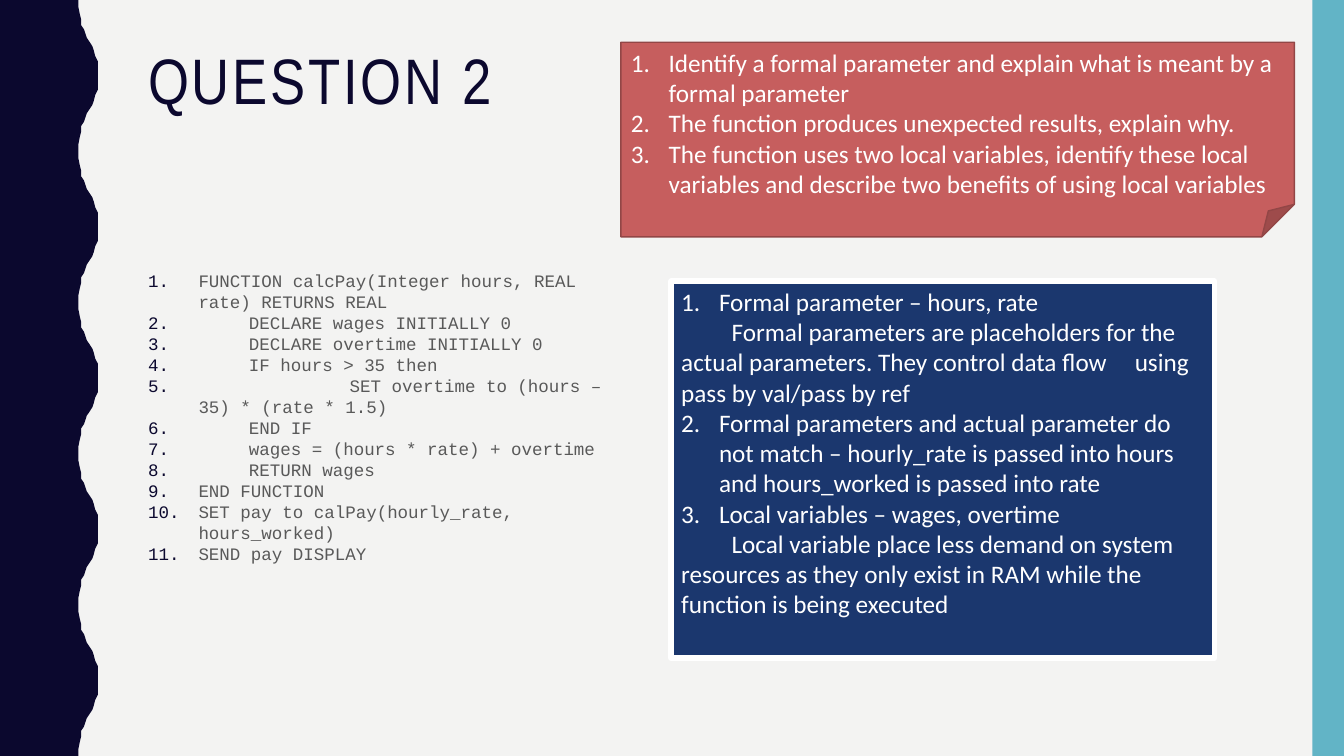
from lxml.etree import SubElement
from pptx import Presentation
from pptx.dml.color import RGBColor
from pptx.enum.shapes import MSO_SHAPE
from pptx.enum.text import MSO_ANCHOR, MSO_AUTO_SIZE, PP_ALIGN
from pptx.oxml.ns import qn
from pptx.util import Pt

NAVY, WHITE = "0B082E", "FFFFFF"
CODE = [
    "FUNCTION calcPay(Integer hours, REAL rate) RETURNS REAL",
    "\tDECLARE wages INITIALLY 0",
    "\tDECLARE overtime INITIALLY 0",
    "\tIF hours > 35 then",
    "\t\tSET overtime to (hours – 35) * (rate * 1.5)",
    "\tEND IF",
    "\twages = (hours * rate) + overtime",
    "\tRETURN wages",
    "END FUNCTION",
    "SET pay to calPay(hourly_rate, hours_worked)",
    "SEND pay DISPLAY",
]
TASKS = [
    "Identify a formal parameter and explain what is meant by a formal parameter",
    "The function produces unexpected results, explain why.",
    "The function uses two local variables, identify these local variables "
    "and describe two benefits of using local variables",
]
ANSWERS = [
    ("Formal parameter – hours, rate", 1),
    ("\tFormal parameters are placeholders for the \tactual parameters. "
     "They control data flow \tusing pass by val/pass by ref", None),
    ("Formal parameters and actual parameter do not match – hourly_rate is "
     "passed into hours and hours_worked is passed into rate", 2),
    ("Local variables – wages, overtime", 2),
    ("\tLocal variable place less demand on system resources as they only "
     "exist in RAM while the function is being executed", None),
]
HALF_X = [56, 56.5, 57, 57.5, 58.5, 59.5, 61, 62.5,
          64, 65.5, 67, 68.5, 69.5, 70, 70]
HALF_Y = [0, 5, 10, 14, 18, 21, 24, 27, 30, 33, 36, 40, 44, 49, 54]


def color(text):
    """Turn a hex string into a colour."""
    return RGBColor.from_string(text)


def apply(target, values):
    """Set each attribute named in a dict of format values."""
    for name, value in values.items():
        setattr(target, name, value)


def place(shape, box):
    """Move and size a shape, in points."""
    apply(shape, dict(zip(("left", "top", "width", "height"), map(Pt, box))))


def paint(shape, fill, line=None, width=0):
    """Give a shape a flat fill and an optional outline."""
    shape.shadow.inherit = False
    shape.fill.solid()
    shape.fill.fore_color.rgb = color(fill)
    if line:
        shape.line.color.rgb = color(line)
        shape.line.width = Pt(width)
    else:
        shape.line.fill.background()


def number(para, start, indent, hue):
    """Number a paragraph with a hanging indent."""
    props = para._p.get_or_add_pPr()
    props.set("marL", str(Pt(indent)))
    props.set("indent", str(-Pt(indent)))
    tone = SubElement(SubElement(props, qn("a:buClr")), qn("a:srgbClr"))
    tone.set("val", hue)
    mark = SubElement(props, qn("a:buAutoNum"))
    mark.set("type", "arabicPeriod")
    if start > 1:
        mark.set("startAt", str(start))


def write(shape, items, font, hue, layout, indent=27, mark=WHITE, tab=36):
    """Fill a shape with text and numbered lines."""
    frame = shape.text_frame
    apply(frame, {"word_wrap": True, "auto_size": MSO_AUTO_SIZE.NONE,
                  "vertical_anchor": MSO_ANCHOR.TOP})
    for index, (text, start) in enumerate(items):
        para = frame.add_paragraph() if index else frame.paragraphs[0]
        apply(para, {"alignment": PP_ALIGN.LEFT, "space_before": Pt(0),
                     "space_after": Pt(0), **layout})
        para._p.get_or_add_pPr().set("defTabSz", str(Pt(tab)))
        if start:
            number(para, start, indent, mark)
        run = para.add_run()
        run.text = text
        apply(run.font, font)
        run.font.color.rgb = color(hue)


def wave(slide):
    """Draw the wavy band down the left edge."""
    half = list(zip(HALF_X, HALF_Y))
    cycle = half + [(x, 108 - y) for x, y in half[-2::-1]]
    edge = [(x, y + 108 * turn) for turn in range(5) for x, y in cycle]
    pen = slide.shapes.build_freeform(0, 0, scale=Pt(1))
    pen.add_line_segments(edge + [(0, 540)], close=True)
    paint(pen.convert_to_shape(), NAVY)


def block(slide, kind, box, *style):
    """Add a painted preset shape."""
    shape = slide.shapes.add_shape(kind, *map(Pt, box))
    paint(shape, *style)
    return shape


def main():
    """Build the question slide."""
    deck = Presentation()
    apply(deck, {"slide_width": Pt(960), "slide_height": Pt(540)})
    slide = deck.slides.add_slide(deck.slide_layouts[1])
    slide.background.fill.solid()
    slide.background.fill.fore_color.rgb = color("F3F3F2")
    wave(slide)
    block(slide, MSO_SHAPE.RECTANGLE, (937.4, 0, 22.6, 540), "62B4C6")

    title, body = slide.placeholders
    place(title, (98.6, 30.2, 801.4, 59))
    write(title, [("QUESTION 2", None)],
          {"name": "Arial Narrow", "size": Pt(45.9)}, NAVY,
          {"line_spacing": 0.9})
    title.text_frame.vertical_anchor = MSO_ANCHOR.MIDDLE
    title.text_frame.paragraphs[0].runs[0].font._element.set("spc", "200")

    place(body, (98.6, 189.4, 344.9, 237.6))
    write(body, [(line, 1) for line in CODE],
          {"name": "Courier New", "size": Pt(12.5)}, "595959",
          {"line_spacing": Pt(15)}, 36, NAVY, 72)

    plain = {"name": "Calibri", "size": Pt(18)}
    note = block(slide, MSO_SHAPE.FOLDED_CORNER, (443.5, 30.2, 481, 139),
                 "C65E5E", "924646", 1)
    write(note, [(task, 1) for task in TASKS], plain, WHITE, {})
    reply = block(slide, MSO_SHAPE.RECTANGLE, (479.5, 200.9, 388, 269.3),
                  "1B376E", WHITE, 4)
    write(reply, ANSWERS, plain, WHITE, {})
    deck.save("out.pptx")


if __name__ == "__main__":
    main()
